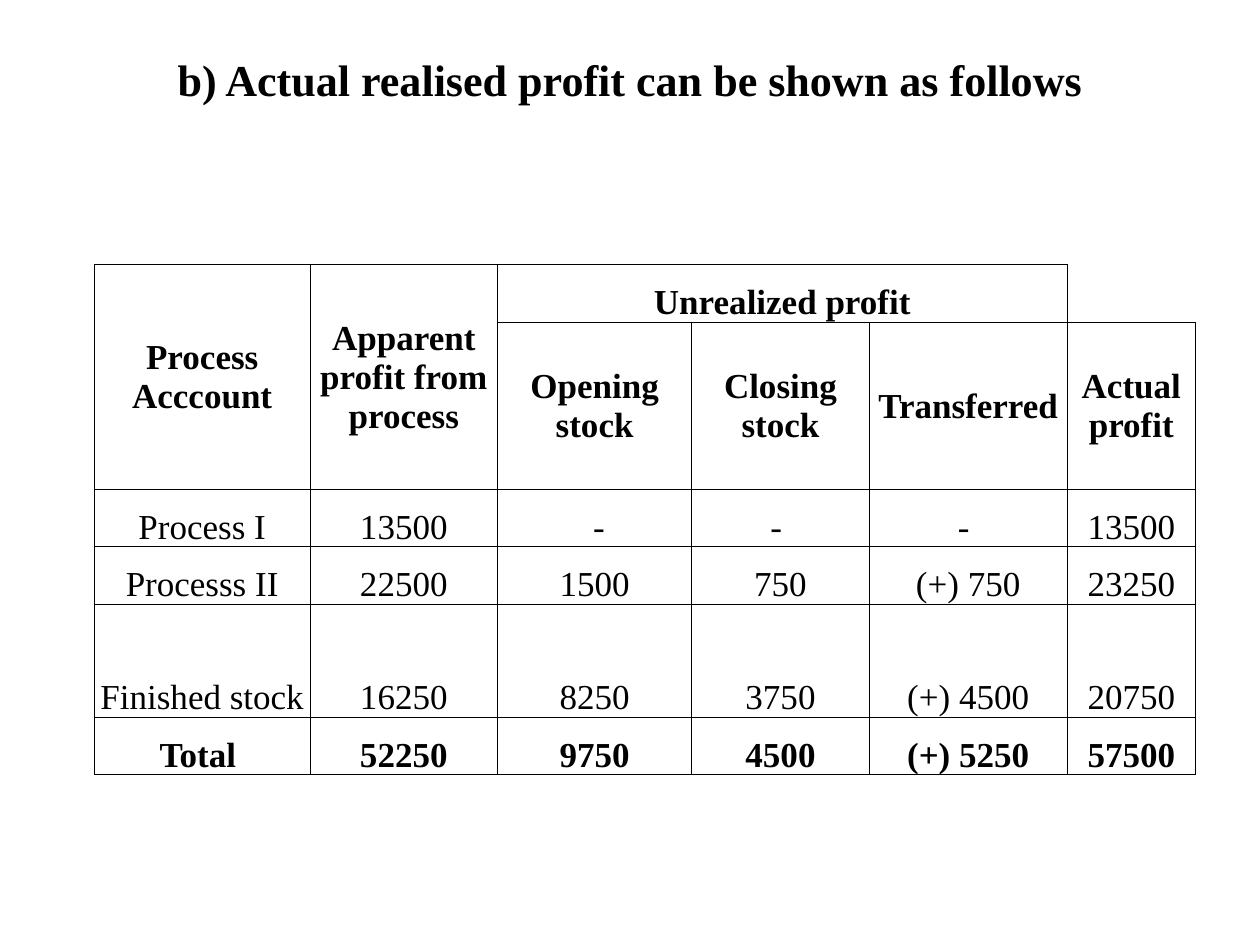
from lxml.etree import SubElement
from pptx import Presentation
from pptx.dml.color import RGBColor
from pptx.enum.text import MSO_ANCHOR, PP_ALIGN
from pptx.oxml.ns import qn
from pptx.util import Inches, Pt

COLORS = {"ink": "000000", "paper": "FFFFFF"}
FONT = "Times New Roman"
NO_STYLE = "{2D5ABB26-0587-4C30-8999-92F81FD0307C}"
W, H = Inches(10), Inches(7.5)

# Relative widths and heights of the table grid
COLS = [1.71, 1.49, 1.54, 1.41, 1.57, 1.02]
ROWS = [0.46, 1.33, 0.46, 0.46, 0.9, 0.46]
DATA = [
    ["Process Acccount", "Apparent profit from process", "Unrealized profit", "", "", ""],
    ["", "", "Opening stock", "Closing stock", "Transferred", "Actual profit"],
    ["Process I", "13500", " -", "- ", "- ", "13500"],
    ["Processs II", "22500", "1500", "750", "(+) 750", "23250"],
    ["Finished stock", "16250", "8250", "3750", "(+) 4500", "20750"],
    ["Total ", "52250", "9750", "4500", "(+) 5250", "57500"],
]
MERGES = [((0, 0), (1, 0)), ((0, 1), (1, 1)), ((0, 2), (0, 4))]
BOLD_ROWS = {0, 1, len(DATA) - 1}
OPEN_CELL = (0, 5)  # corner above "Actual profit", open at top and right


def write(tf, text, size=20, bold=False, color="ink", align=PP_ALIGN.CENTER):
    p = tf.paragraphs[0]
    p.alignment = align
    r = p.add_run()
    r.text = text
    r.font.name, r.font.size, r.font.bold = FONT, Pt(size), bold
    r.font.color.rgb = RGBColor.from_string(COLORS[color])


def set_borders(cell, sides):
    tc_pr = cell._tc.get_or_add_tcPr()
    for side in "LRTB":
        ln = SubElement(tc_pr, qn(f"a:ln{side}"), w=str(Pt(0.5)))
        if side in sides:
            fill = SubElement(ln, qn("a:solidFill"))
            SubElement(fill, qn("a:srgbClr"), val=COLORS["ink"])
        else:
            SubElement(ln, qn("a:noFill"))


def add_title(slide, text, left, top, width, height):
    sp = slide.shapes.title
    sp.left, sp.top, sp.width, sp.height = left, top, width, height
    tf = sp.text_frame
    tf.word_wrap = True
    tf.vertical_anchor = MSO_ANCHOR.MIDDLE
    tf.margin_bottom = int(height * 0.52)  # lifts the line into the upper half
    write(tf, text, size=25.2, bold=True)


def add_profit_table(slide, left, top, width, height):
    frame = slide.shapes.add_table(len(ROWS), len(COLS), left, top, width, height)
    table = frame.table
    table.first_row = table.horz_banding = False
    table._tbl.tblPr.find(qn("a:tableStyleId")).text = NO_STYLE
    for col, share in zip(table.columns, COLS):
        col.width = int(width * share / sum(COLS))
    for row, share in zip(table.rows, ROWS):
        row.height = int(height * share / sum(ROWS))
    for first, last in MERGES:
        table.cell(*first).merge(table.cell(*last))

    # Borders, anchoring and text of each cell
    for i, row in enumerate(DATA):
        for j, text in enumerate(row):
            cell = table.cell(i, j)
            set_borders(cell, "LB" if (i, j) == OPEN_CELL else "LRTB")
            cell.fill.background()
            cell.margin_left = cell.margin_right = cell.margin_top = Inches(0.01)
            cell.margin_bottom = 0
            centred = i == 1 or (i == 0 and j < 2)
            cell.vertical_anchor = MSO_ANCHOR.MIDDLE if centred else MSO_ANCHOR.BOTTOM
            if text:
                write(cell.text_frame, text, bold=i in BOLD_ROWS)


def main():
    prs = Presentation()
    prs.slide_width, prs.slide_height = W, H
    slide = prs.slides.add_slide(prs.slide_layouts[5])
    slide.background.fill.solid()
    slide.background.fill.fore_color.rgb = RGBColor.from_string(COLORS["paper"])
    add_title(slide, "b) Actual realised profit can be shown as follows",
              int(W * 0.05), int(H * 0.04), int(W * 0.9), int(H / 6))
    add_profit_table(slide, int(W * 0.075), int(H * 0.28), int(W * 0.874), int(H * 0.54))
    prs.save("out.pptx")


if __name__ == "__main__":
    main()
